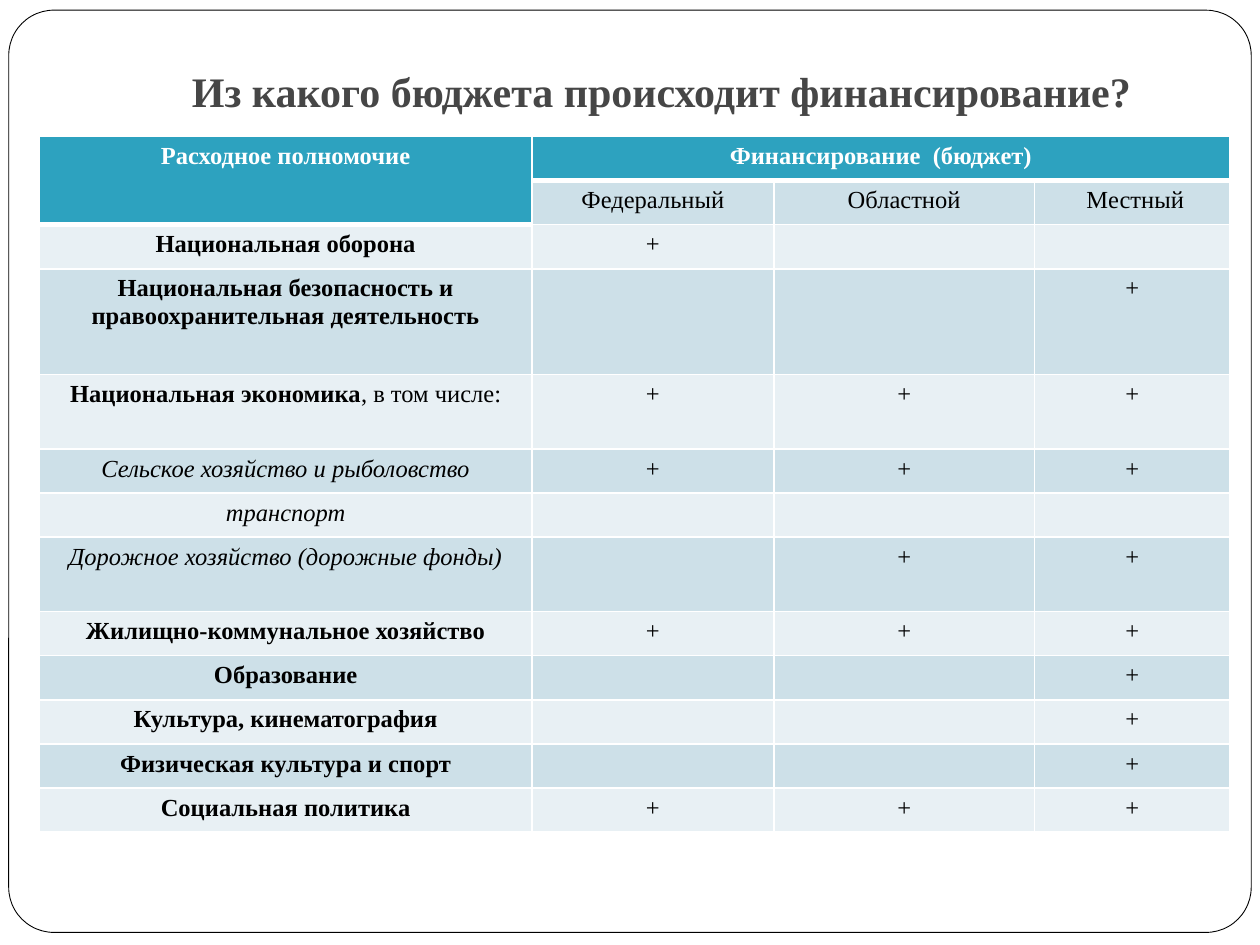
"""Build a slide with a table of budget levels that finance each spending duty."""
from dataclasses import dataclass

from lxml.etree import SubElement
from pptx import Presentation
from pptx.dml.color import RGBColor
from pptx.enum.shapes import MSO_SHAPE as Shape
from pptx.enum.text import MSO_ANCHOR as Anchor, PP_ALIGN as Align
from pptx.oxml.ns import qn
from pptx.util import Pt

WHITE = RGBColor(0xFF, 0xFF, 0xFF)
BLACK = RGBColor(0, 0, 0)
GRAY = RGBColor(0x46, 0x46, 0x46)
TEAL = RGBColor(0x2D, 0xA2, 0xBF)
BANDS = (RGBColor(0xE8, 0xF0, 0xF4), RGBColor(0xCD, 0xE0, 0xE8))
FONT = "Times New Roman"
CELL_SIZE = 14
COL_WIDTHS = (281.5, 138.2, 149, 111.6)
ROW_H = 25.2
LEVELS = ("Федеральный", "Областной", " Местный")


@dataclass(frozen=True)
class Run:
    text: str
    bold: bool = False
    italic: bool = False
    color: RGBColor = BLACK
    size: float = CELL_SIZE


@dataclass(frozen=True)
class Duty:
    runs: tuple[Run, ...]
    marks: str
    height: float = ROW_H


def bold(text: str) -> Run:
    return Run(text, bold=True)


def italic(text: str) -> Run:
    return Run(text, italic=True)


DUTIES = (
    Duty((bold("Национальная оборона"),), "+--"),
    Duty((bold("Национальная безопасность и правоохранительная деятельность"),), "--+", 60.5),
    Duty((bold("Национальная экономика"), Run(", в том числе:")), "+++", 42.5),
    Duty((italic("Сельское хозяйство и рыболовство"),), "+++"),
    Duty((italic("транспорт"),), "---"),
    Duty((italic("Дорожное хозяйство (дорожные фонды)"),), "-++", 42.5),
    Duty((bold("Жилищно-коммунальное хозяйство"),), "+++"),
    Duty((bold("Образование"),), "--+"),
    Duty((bold("Культура, кинематография"),), "--+"),
    Duty((bold("Физическая культура и спорт"),), "--+"),
    Duty((bold("Социальная политика"),), "+++"),
)


def add_runs(p, runs: tuple[Run, ...]) -> None:
    p.alignment = Align.CENTER
    for run in runs:
        r = p.add_run()
        r.text = run.text
        r.font.name, r.font.size = FONT, Pt(run.size)
        r.font.bold, r.font.italic = run.bold, run.italic
        r.font.color.rgb = run.color


def set_border(cell, side: str, width: float) -> None:
    ln = SubElement(cell._tc.get_or_add_tcPr(), qn(f"a:ln{side}"), w=str(Pt(width)))
    SubElement(SubElement(ln, qn("a:solidFill")), qn("a:srgbClr"), val=str(WHITE))


def fill_cell(cell, runs: tuple[Run, ...], color: RGBColor, top: float, bottom: float) -> None:
    for side, width in (("L", 1), ("R", 1), ("T", top), ("B", bottom)):
        set_border(cell, side, width)
    cell.fill.solid()
    cell.fill.fore_color.rgb = color
    p = cell.text_frame.paragraphs[0]
    add_runs(p, runs)
    SubElement(p._p, qn("a:endParaRPr"), sz=str(CELL_SIZE * 100))


def header_edge(row: int, col: int) -> float:
    return 3 if row == (1 if col == 0 else 0) else 1


def add_title(s) -> None:
    sp = s.shapes.title
    sp.left, sp.top, sp.width, sp.height = Pt(72), Pt(21.6), Pt(612), Pt(51.8)
    tf = sp.text_frame
    tf.word_wrap, tf.vertical_anchor = True, Anchor.BOTTOM
    tf.margin_left = tf.margin_right = tf.margin_bottom = Pt(7.2)
    tf.margin_top = Pt(3.6)
    add_runs(tf.paragraphs[0],
             (Run("Из какого бюджета происходит финансирование?", True, color=GRAY, size=24),))


def add_frame(s) -> None:
    sp = s.shapes.add_shape(Shape.ROUNDED_RECTANGLE, Pt(5), Pt(5.8), Pt(710), Pt(527))
    sp.adjustments[0] = 0.049
    sp.shadow.inherit = False
    sp.fill.solid()
    sp.fill.fore_color.rgb = WHITE
    sp.line.color.rgb, sp.line.width = BLACK, Pt(0.5)
    s.shapes.title.element.addprevious(sp.element)


def add_budget_table(s) -> None:
    head = (Run("Расходное полномочие", True, color=WHITE),)
    group = (Run("Финансирование  (бюджет)", True, color=WHITE),)
    rows = [(head, group, (), ()), ((), *((Run(name),) for name in LEVELS))]
    rows += [(d.runs, *((Run("+"),) if m == "+" else () for m in d.marks)) for d in DUTIES]
    heights = [ROW_H, ROW_H, *(d.height for d in DUTIES)]
    table = s.shapes.add_table(len(rows), len(COL_WIDTHS), Pt(22.5), Pt(78),
                               Pt(sum(COL_WIDTHS)), Pt(sum(heights))).table
    for col, width in zip(table.columns, COL_WIDTHS):
        col.width = Pt(width)
    for i, (cells, height) in enumerate(zip(rows, heights)):
        table.rows[i].height = Pt(height)
        for j, runs in enumerate(cells):
            is_head = i == 0 or (i == 1 and j == 0)
            fill_cell(table.cell(i, j), runs, TEAL if is_head else BANDS[i % 2],
                      header_edge(i - 1, j), header_edge(i, j))
    table.cell(0, 0).merge(table.cell(1, 0))
    table.cell(0, 1).merge(table.cell(0, 3))


def main() -> None:
    prs = Presentation()
    prs.slide_width, prs.slide_height = Pt(720), Pt(540)
    s = prs.slides.add_slide(prs.slide_layouts[5])
    add_title(s)
    add_frame(s)
    add_budget_table(s)
    prs.save("out.pptx")


if __name__ == "__main__":
    main()
